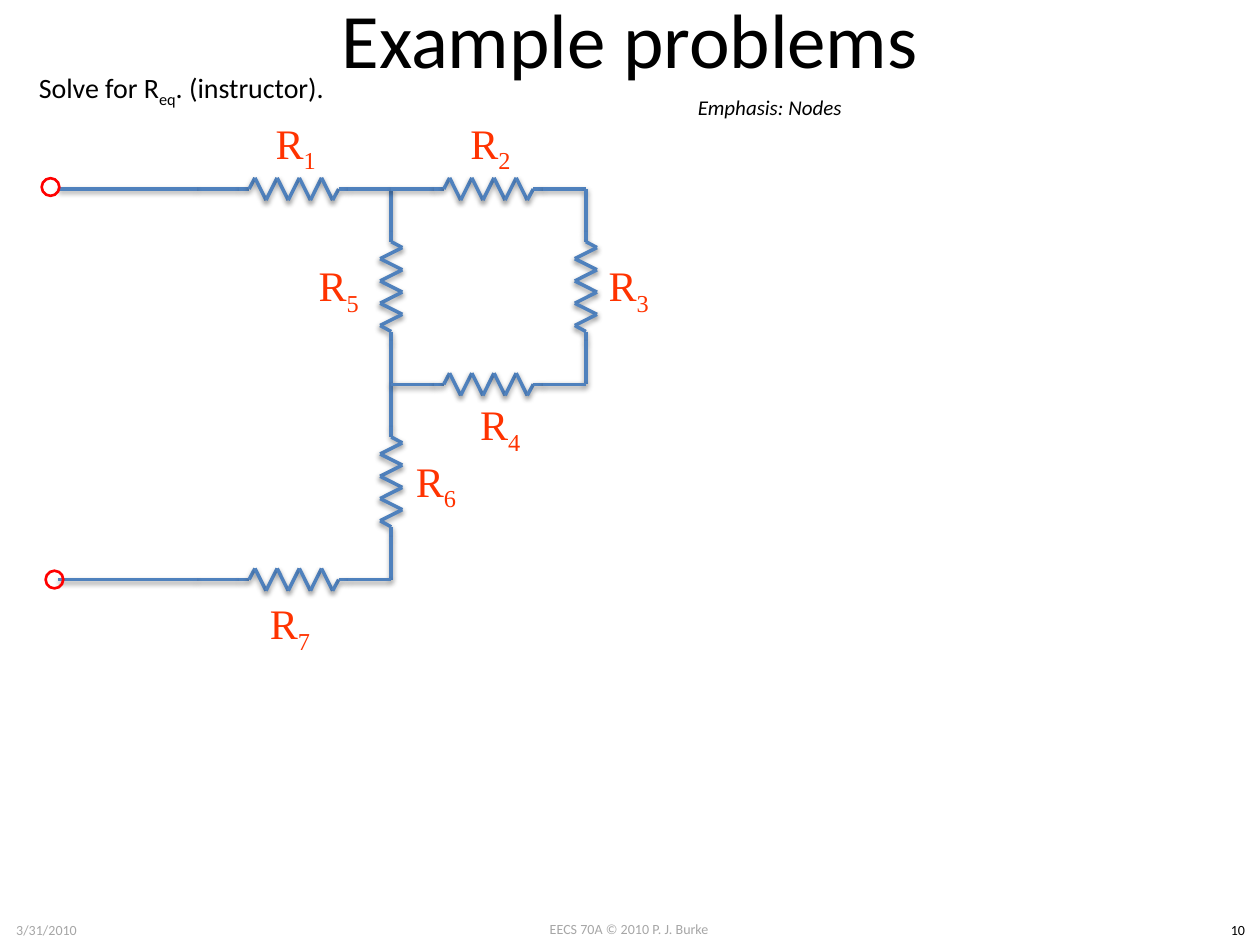
from itertools import pairwise

from lxml.etree import SubElement
from pptx import Presentation
from pptx.dml.color import RGBColor
from pptx.enum.shapes import MSO_CONNECTOR as Line, MSO_SHAPE as Shape
from pptx.enum.text import MSO_ANCHOR as Anchor, PP_ALIGN as Align
from pptx.oxml.ns import qn
from pptx.util import Inches, Pt

LEFT, TOP = 1.56, 1.5          # circuit node at column 0, row 0
COL, ROW = 1.545, 1.55         # distance between circuit nodes
AMP = 0.057                    # zigzag height and step, as share of a cell

# Name: start column, start row, runs down, label column, label row
RESISTORS = {
    "5": (1, 0, True, 0.73, 0.51),
    "6": (1, 1, True, 1.23, 1.51),
    "1": (0, 0, False, 0.51, -0.22),
    "2": (1, 0, False, 1.51, -0.22),
    "3": (2, 0, True, 2.22, 0.51),
    "4": (1, 1, False, 1.56, 1.22),
    "7": (0, 2, False, 0.48, 2.24),
}
ZIGZAG = [(0, 0), (0.22, 0), (0.27, 0),
          *((0.3 + AMP * k, AMP if k % 2 else -AMP) for k in range(8)),
          (0.73, 0), (0.78, 0), (1, 0)]


def color(hex_text):
    return RGBColor.from_string(hex_text)


def node(col, row):
    """Position on the slide of a point of the circuit grid."""
    return Inches(LEFT + COL * col), Inches(TOP + ROW * row)


def write(tf, *runs, size, fill="000000", font="Calibri", italic=False,
          align=Align.LEFT, anchor=Anchor.TOP, wrap=True):
    """Fill a text frame; a run given as a tuple holds a subscript."""
    tf.word_wrap = wrap
    tf.vertical_anchor = anchor
    p = tf.paragraphs[0]
    p.alignment = align
    for run in runs:
        r = p.add_run()
        r.text = run[0] if isinstance(run, tuple) else run
        r.font.size, r.font.name, r.font.italic = Pt(size), font, italic
        r.font.color.rgb = color(fill)
        if isinstance(run, tuple):
            r.font._element.set("baseline", "-25000")


def add_shadow(line):
    effects = SubElement(line._element.spPr, qn("a:effectLst"))
    outer = SubElement(effects, qn("a:outerShdw"), blurRad=str(Pt(3.1)),
                       dist=str(Pt(1.6)), dir="5400000", rotWithShape="0")
    black = SubElement(outer, qn("a:srgbClr"), val="000000")
    SubElement(black, qn("a:alpha"), val="38000")


class CircuitSlide:
    wire_color, label_color, terminal_color = "4F81BD", "FF3300", "FF0000"

    def __init__(self, prs):
        self.prs = prs
        self.slide = prs.slides.add_slide(prs.slide_layouts[5])
        self.shapes = self.slide.shapes

    def box(self, left, top, width, height):
        """Turn percentages of the slide into lengths."""
        w, h = self.prs.slide_width, self.prs.slide_height
        return [int(share * side / 100) for share, side in
                ((left, w), (top, h), (width, w), (height, h))]

    def title(self, text, *place):
        sp = self.shapes.title
        sp.left, sp.top, sp.width, sp.height = self.box(*place)
        write(sp.text_frame, text, size=44, align=Align.CENTER,
              anchor=Anchor.MIDDLE)

    def text(self, place, *runs, **style):
        sp = self.shapes.add_textbox(*self.box(*place))
        write(sp.text_frame, *runs, **style)

    def wire(self, start, end, shapes=None):
        line = (shapes or self.shapes).add_connector(
            Line.STRAIGHT, *node(*start), *node(*end))
        line.line.color.rgb = color(self.wire_color)
        line.line.width = Pt(2)
        add_shadow(line)

    def resistor(self, number, col, row, down, label_col, label_row):
        group = self.shapes.add_group_shape().shapes
        w, h = Inches(1.19), Inches(0.73)
        x, y = node(label_col, label_row)
        label = group.add_textbox(x - w // 2, y - h // 2, w, h)
        write(label.text_frame, "R", (number,), size=24,
              fill=self.label_color, font="Times New Roman",
              align=Align.CENTER, anchor=Anchor.MIDDLE)
        points = [(col - side, row + along) if down
                  else (col + along, row + side) for along, side in ZIGZAG]
        for start, end in pairwise(points):
            self.wire(start, end, group)

    def terminal(self, col, row):
        d = Inches(0.14)
        x, y = node(col, row)
        sp = self.shapes.add_shape(Shape.OVAL, x - d // 2, y - d // 2, d, d)
        sp.shadow.inherit = False
        sp.fill.background()
        sp.line.color.rgb = color(self.terminal_color)
        sp.line.width = Pt(1.5)


def main():
    prs = Presentation()
    prs.slide_width, prs.slide_height = Inches(10), Inches(7.5)
    s = CircuitSlide(prs)

    for text, fill, place in (
            ("EECS 70A © 2010 P. J. Burke", "A6A6A6", (38.3, 96.8, 23.3, 3.2)),
            ("3/31/2010", "A6A6A6", (0, 96.9, 7.4, 3.2)),
            ("10", "000000", (96.5, 96.9, 3.5, 3.2))):
        s.text(place, text, size=8, fill=fill, align=Align.CENTER)
    s.title("Example problems", 5, -4.4, 90, 16.67)
    s.text((2.1, 6.8, 26, 4.93), "Solve for R", ("eq",), ". (instructor).",
           size=16, wrap=False)

    for number, layout in RESISTORS.items():
        s.resistor(number, *layout)
    for row in (0, 2):
        s.wire((-0.71, row), (0, row))
    s.terminal(-0.75, -0.01)
    s.terminal(-0.73, 2)

    s.text((54.4, 9.33, 14, 4), "Emphasis: Nodes", size=12, italic=True,
           wrap=False)
    prs.save("out.pptx")


if __name__ == "__main__":
    main()
